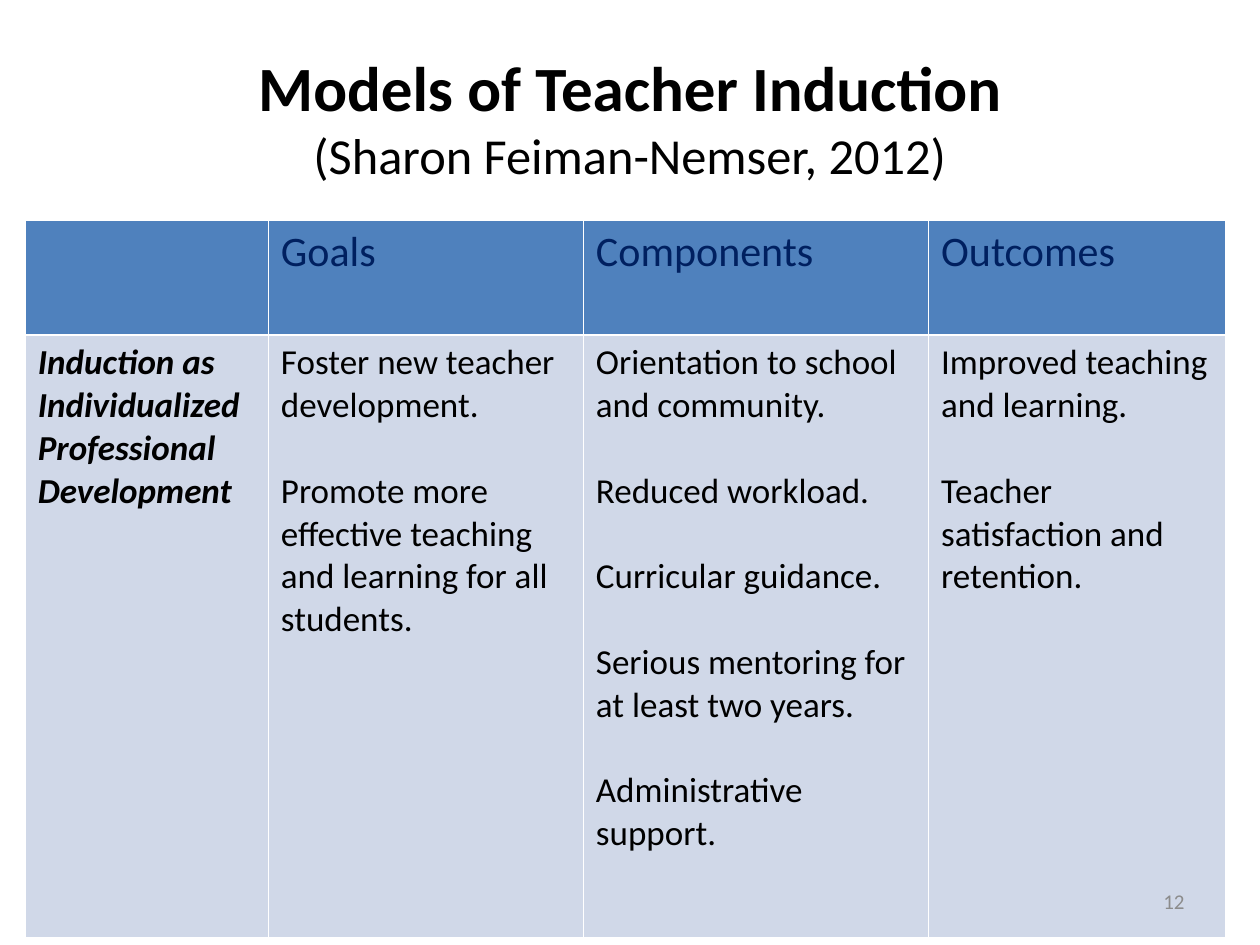
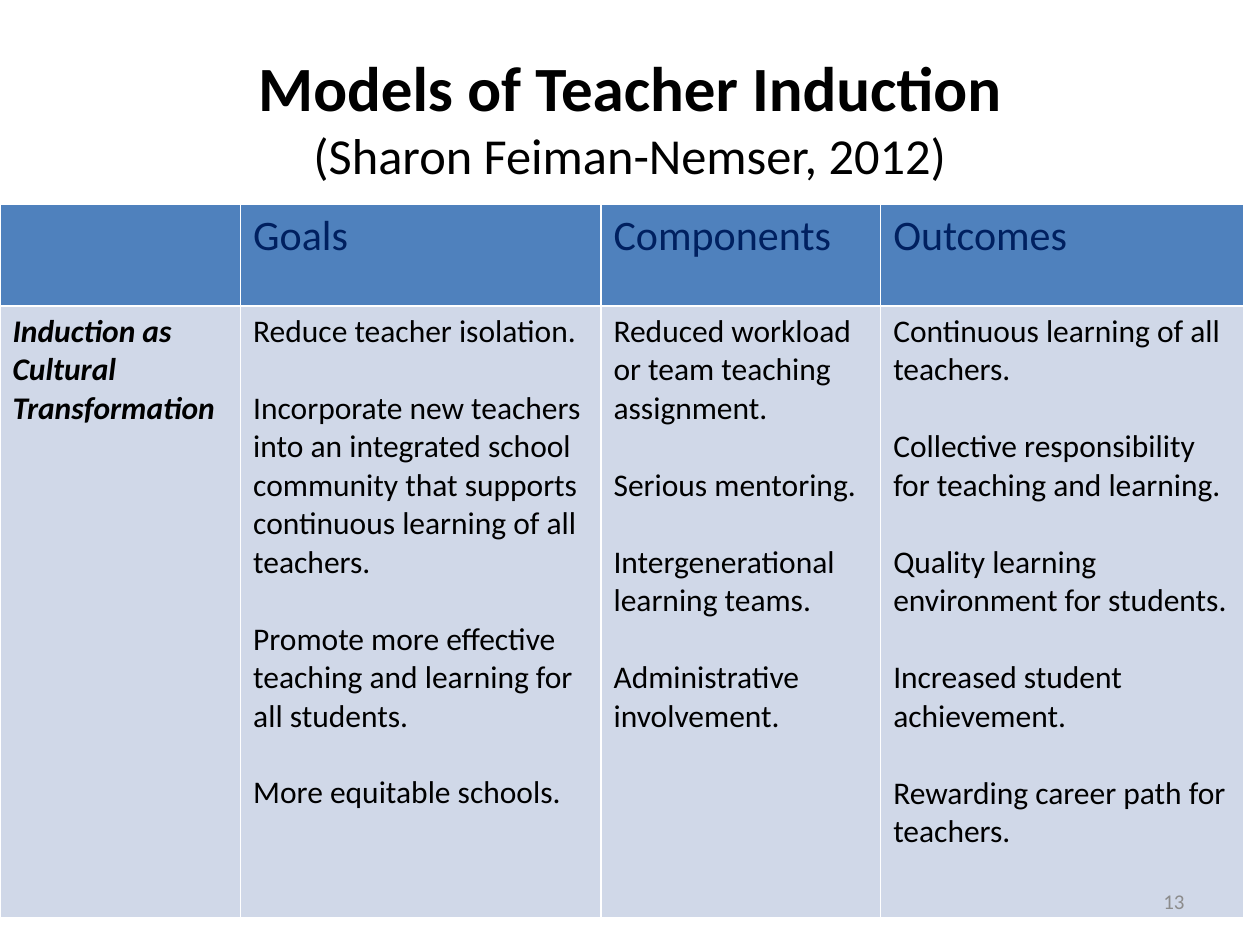
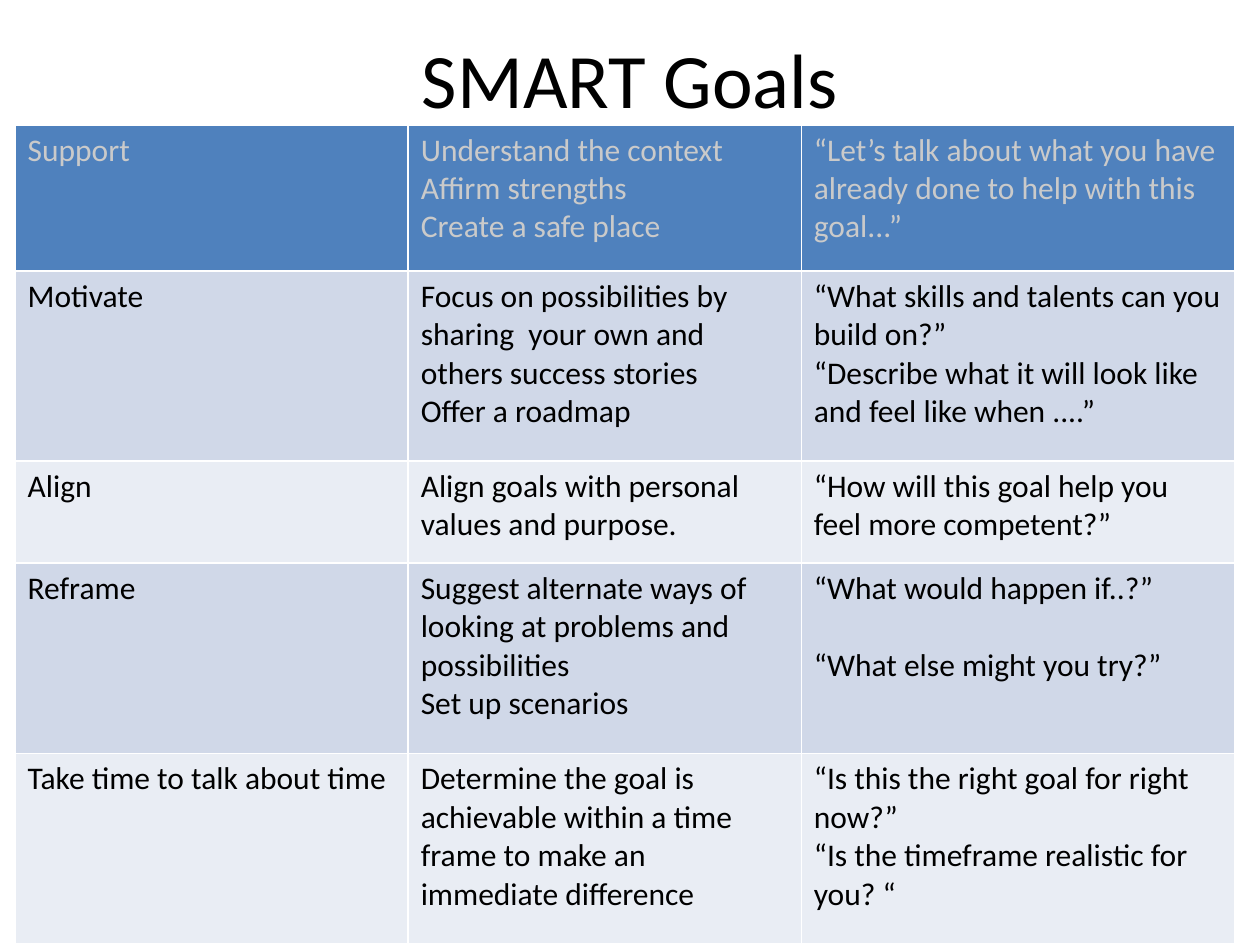
from lxml.etree import SubElement
from pptx import Presentation
from pptx.dml.color import RGBColor
from pptx.enum.text import MSO_ANCHOR, PP_ALIGN
from pptx.oxml.ns import qn
from pptx.util import Inches, Pt

FONT = "Calibri"
LINE_FACTOR = 1.22
COLORS = {
    "header": "4F81BD",
    "band": "D0D8E8",
    "light_band": "E9EDF4",
    "border": "FFFFFF",
    "text": "000000",
    "navy": "002060",
    "pale": "CACACA",
    "number": "8C8C8C",
}

MODELS_TITLE = [
    ("Models of Teacher Induction", 36, True),
    ("(Sharon Feiman-Nemser, 2012)", 28.8, False),
]
MODELS_HEADER = [[], ["Goals"], ["Components"], ["Outcomes"]]

SLIDES = [
    {
        "title": MODELS_TITLE,
        "title_box": (0.5, 0.3, 9, 1.25),
        "number": "12",
        "origin": (0.2, 1.75),
        "columns": [1.93, 2.5, 2.74, 2.36],
        "heights": [0.91, 4.78],
        "header": {"size": 24, "color": "navy"},
        "body_size": 20,
        "bold_labels": True,
        "spaced": True,
        "rows": [
            MODELS_HEADER,
            [
                ["Induction as Individualized Professional Development"],
                ["Foster new teacher development.",
                 "Promote more effective teaching and learning for all students."],
                ["Orientation to school and community.",
                 "Reduced workload.",
                 "Curricular guidance.",
                 "Serious mentoring for at least two years.",
                 "Administrative support."],
                ["Improved teaching and learning.",
                 "Teacher satisfaction and retention."],
            ],
        ],
    },
    {
        "title": MODELS_TITLE,
        "title_box": (0.5, 0.3, 9, 1.25),
        "number": "13",
        "origin": (0, 1.62),
        "columns": [1.91, 2.86, 2.22, 2.88],
        "heights": [0.81, 4.85],
        "header": {"size": 24, "color": "navy"},
        "body_size": 18,
        "bold_labels": True,
        "spaced": True,
        "rows": [
            MODELS_HEADER,
            [
                ["Induction as Cultural Transformation"],
                ["Reduce teacher isolation.",
                 "Incorporate new teachers into an integrated school community "
                 "that supports continuous learning of all teachers.",
                 "Promote more effective teaching and learning for all students.",
                 "More equitable schools."],
                ["Reduced workload or team teaching assignment.",
                 "Serious mentoring.",
                 "Intergenerational learning teams.",
                 "Administrative involvement."],
                ["Continuous learning of all teachers.",
                 "Collective responsibility for teaching and learning.",
                 "Quality learning environment for students.",
                 "Increased student achievement.",
                 "Rewarding career path for teachers."],
            ],
        ],
    },
    {
        "title": [("SMART Goals", 44, False)],
        "title_box": (0.5, 0, 9, 1.23),
        "number": None,
        "origin": (0.12, 0.99),
        "columns": [3.12, 3.12, 3.44],
        "heights": [1.16, 1.51, 0.81, 1.51, 1.51],
        "header": {"size": 18, "color": "pale"},
        "body_size": 18,
        "bold_labels": False,
        "spaced": False,
        "spaced_cells": [(3, 2)],
        "rows": [
            [["Support"],
             ["Understand the context", "Affirm strengths", "Create a safe place"],
             ["“Let’s talk about what you have already done to help with this goal...”"]],
            [["Motivate"],
             ["Focus on possibilities by sharing  your own and others success stories",
              "Offer a roadmap"],
             ["“What skills and talents can you build on?”",
              "“Describe what it will look like and feel like when ....”"]],
            [["Align"],
             ["Align goals with personal values and purpose."],
             ["“How will this goal help you feel more competent?”"]],
            [["Reframe"],
             ["Suggest alternate ways of looking at problems and possibilities",
              "Set up scenarios"],
             ["“What would happen if..?”", "“What else might you try?”"]],
            [["Take time to talk about time"],
             ["Determine the goal is achievable within a time frame to make an "
              "immediate difference"],
             ["“Is this the right goal for right now?”",
              "“Is the timeframe realistic for you? “"]],
        ],
    },
]


def rgb(name):
    return RGBColor.from_string(COLORS[name])


def add_span(para, text, size, color="text", bold=False, italic=False):
    span = para.add_run()
    span.text = text
    span.font.name = FONT
    span.font.size = Pt(size)
    span.font.bold = bold
    span.font.italic = italic
    span.font.color.rgb = rgb(color)


def add_text_line(page, place, align):
    box = page.shapes.add_textbox(*map(Inches, place))
    frame = box.text_frame
    frame.word_wrap = True
    frame.vertical_anchor = MSO_ANCHOR.MIDDLE
    para = frame.paragraphs[0]
    para.alignment = align
    return para


def add_title(page, lines, place):
    para = add_text_line(page, place, PP_ALIGN.CENTER)
    for index, (text, size, bold) in enumerate(lines):
        if index:
            para.add_line_break()
        add_span(para, text, size, bold=bold)


def add_borders(cell):
    properties = cell._tc.get_or_add_tcPr()
    for index, side in enumerate(("a:lnL", "a:lnR", "a:lnT", "a:lnB")):
        line = SubElement(properties, qn(side), w=str(Pt(1)))
        fill = SubElement(line, qn("a:solidFill"))
        SubElement(fill, qn("a:srgbClr"), val=COLORS["border"])
        properties.insert(index, line)


def fill_cell(cell, texts, band, style, gap):
    cell.fill.solid()
    cell.fill.fore_color.rgb = rgb(band)
    add_borders(cell)
    frame = cell.text_frame
    for index, text in enumerate(texts):
        para = frame.add_paragraph() if index else frame.paragraphs[0]
        if index and gap:
            para.space_before = Pt(round(style["size"] * LINE_FACTOR, 1))
        add_span(para, text, **style)


def add_grid(page, content):
    rows, columns, heights = content["rows"], content["columns"], content["heights"]
    left, top = content["origin"]
    size = (left, top, sum(columns), sum(heights))
    table = page.shapes.add_table(len(rows), len(columns), *map(Inches, size)).table
    for column, width in zip(table.columns, columns):
        column.width = Inches(width)
    for row, height in zip(table.rows, heights):
        row.height = Inches(height)
    for r, row in enumerate(rows):
        band = "header" if r == 0 else "band" if r % 2 else "light_band"
        for c, texts in enumerate(row):
            style = content["header"]
            if r:
                label = content["bold_labels"] and c == 0
                style = {"size": content["body_size"], "bold": label, "italic": label}
            gap = content["spaced"] or (r, c) in content.get("spaced_cells", [])
            fill_cell(table.cell(r, c), texts, band, style, gap)


def main():
    deck = Presentation()
    deck.slide_width, deck.slide_height = Inches(10), Inches(7.5)
    for content in SLIDES:
        page = deck.slides.add_slide(deck.slide_layouts[6])
        add_title(page, content["title"], content["title_box"])
        add_grid(page, content)
        if content["number"]:
            para = add_text_line(page, (7.17, 6.95, 2.33, 0.4), PP_ALIGN.RIGHT)
            add_span(para, content["number"], 12, "number")
    deck.save("out.pptx")


if __name__ == "__main__":
    main()
